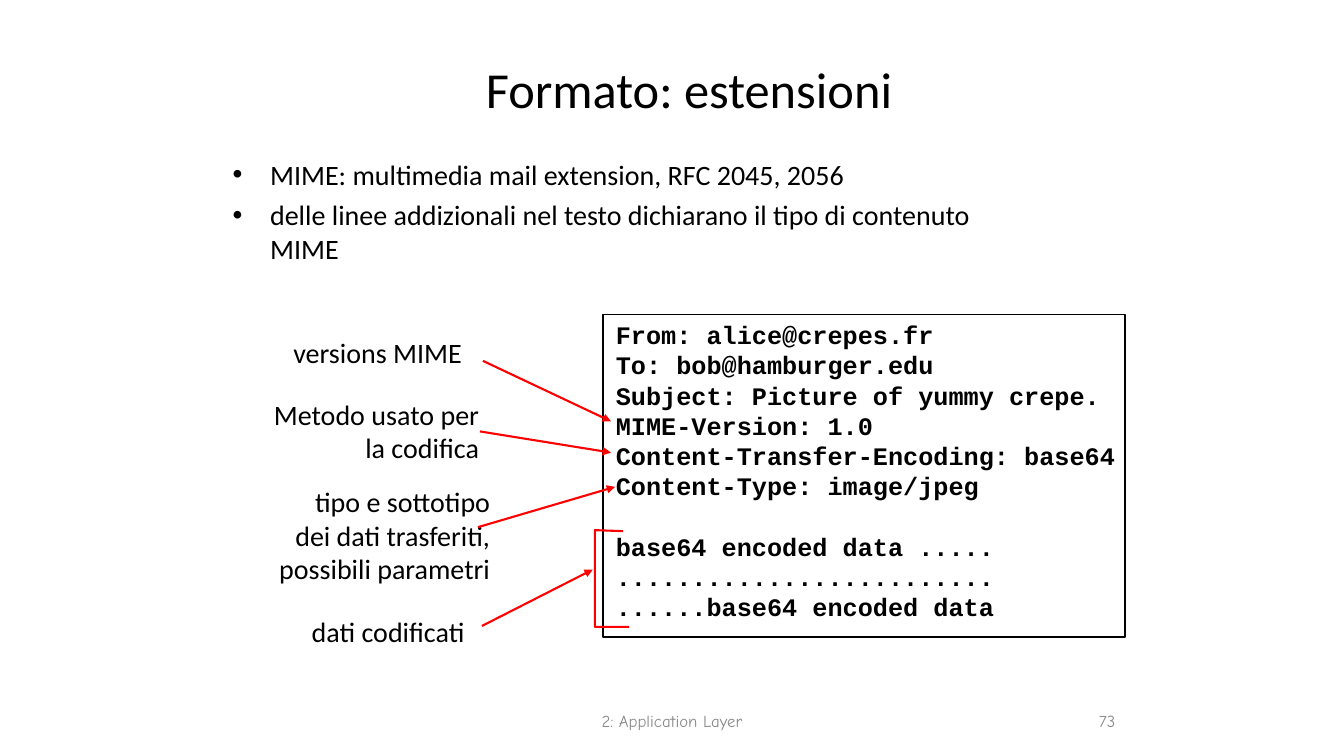
from lxml import etree
from pptx import Presentation
from pptx.dml.color import RGBColor
from pptx.enum.shapes import MSO_CONNECTOR, MSO_SHAPE
from pptx.enum.text import MSO_ANCHOR, PP_ALIGN
from pptx.oxml.ns import qn
from pptx.util import Inches, Pt

LEFT, MID, RIGHT = PP_ALIGN.LEFT, PP_ALIGN.CENTER, PP_ALIGN.RIGHT
TOP, CENTER = MSO_ANCHOR.TOP, MSO_ANCHOR.MIDDLE
STRAIGHT, RECT = MSO_CONNECTOR.STRAIGHT, MSO_SHAPE.RECTANGLE
COLORS = {"ink": "000000", "mark": "FF0000", "foot": "898989"}
BODY, MONO, COMIC = "Calibri", "Courier New", "Comic Neue"
MAIL = [
    "From: alice@crepes.fr",
    "To: bob@hamburger.edu",
    "Subject: Picture of yummy crepe.",
    "MIME-Version: 1.0",
    "Content-Transfer-Encoding: base64",
    "Content-Type: image/jpeg",
]
DATA = [
    "base64 encoded data .....",
    ".........................",
    "......base64 encoded data",
]
NOTES = [
    (["versions MIME"], (2.8, 3.28, 1.89, 0.44), MID, (4.79, 3.58), (6.06, 4.18)),
    (["Metodo usato per", "la codifica"], (2.6, 3.89, 2.25, 0.78), RIGHT,
     (4.76, 4.28), (6.06, 4.49)),
    (["tipo e sottotipo", "dei dati trasferiti,", "possibili parametri"],
     (2.65, 4.76, 2.31, 1.11), RIGHT, (4.74, 5.23), (6.1, 4.83)),
    (["dati codificati"], (2.98, 6.05, 1.74, 0.44), MID, (4.78, 6.21), (5.88, 5.65)),
]


def color(name):
    """Return the named colour."""
    return RGBColor.from_string(COLORS[name])


def write(slide, box, lines, size=20, font=BODY, ink="ink", bold=False,
          align=LEFT, anchor=TOP, wrap=True, pitch=None):
    """Place one paragraph per line in a text box and return its frame."""
    frame = slide.shapes.add_textbox(*map(Inches, box)).text_frame
    frame.word_wrap = wrap
    frame.vertical_anchor = anchor
    for i, line in enumerate(lines):
        para = frame.add_paragraph() if i else frame.paragraphs[0]
        para.alignment = align
        if pitch:
            para.line_spacing = Pt(pitch)
        run = para.add_run()
        run.text = line
        run.font.size, run.font.name, run.font.bold = Pt(size), font, bold
        run.font.color.rgb = color(ink)
    return frame


def stroke(shape, name, width):
    """Give a shape or connector its line."""
    shape.line.color.rgb = color(name)
    shape.line.width = Pt(width)


def arrow(slide, start, end):
    """Draw a red arrow between two points."""
    link = slide.shapes.add_connector(STRAIGHT, *map(Inches, start + end))
    stroke(link, "mark", 1.5)
    etree.SubElement(link.line._get_or_add_ln(), qn("a:tailEnd"), type="triangle")
    etree.SubElement(link._element.spPr, qn("a:effectLst"))


def bullets(slide, box, lines):
    """Place the bulleted list."""
    for para in write(slide, box, lines).paragraphs:
        para.space_before = Pt(5)
        props = para._p.get_or_add_pPr()
        props.set("marL", str(Inches(0.37)))
        props.set("indent", str(Inches(-0.37)))
        etree.SubElement(props, qn("a:buFont"), typeface="Arial")
        etree.SubElement(props, qn("a:buChar"), char="•")


def mail(slide, box):
    """Place the framed message, with a gap between header and data."""
    x, y, w, h = box
    pitch = 21.6
    frame = write(slide, (x + 0.03, y, w + 0.26, h), MAIL + DATA, size=18,
                  font=MONO, bold=True, pitch=pitch)
    frame.paragraphs[len(MAIL)].space_before = Pt(pitch)
    edge = slide.shapes.add_shape(RECT, *map(Inches, box))
    edge.shadow.inherit = False
    edge.fill.background()
    stroke(edge, "ink", 1)


def bracket(slide, box):
    """Draw the open bracket beside the encoded data."""
    x, y, w, h = box
    points = [(x, y), (x, y + h), (x + w, y + h)]
    path = slide.shapes.build_freeform(Inches(x + 0.28), Inches(y + 0.01))
    path.add_line_segments([(Inches(a), Inches(b)) for a, b in points], close=False)
    shape = path.convert_to_shape()
    shape.shadow.inherit = False
    shape.fill.background()
    stroke(shape, "mark", 1.5)


def labels(slide):
    """Place each label with its arrow."""
    for lines, box, align, start, end in NOTES:
        write(slide, box, lines, align=align, wrap=False)
        arrow(slide, start, end)


def footer(slide, top, height):
    """Place the footer text and the slide number."""
    style = {"size": 12, "font": COMIC, "ink": "foot", "anchor": CENTER}
    write(slide, (5.08, top, 3.17, height), ["2: Application Layer"], align=MID, **style)
    write(slide, (8.83, top, 2.33, height), ["73"], align=RIGHT, **style)


def main():
    """Build and save the slide."""
    deck = Presentation()
    deck.slide_width, deck.slide_height = Inches(13.33), Inches(7.5)
    slide = deck.slides.add_slide(deck.slide_layouts[6])
    write(slide, (2.25, 0.25, 9.17, 1.25), ["Formato: estensioni"], size=36,
          align=MID, anchor=CENTER)
    bullets(slide, (2.21, 1.51, 8.01, 5.08), [
        "MIME: multimedia mail extension, RFC 2045, 2056",
        "delle linee addizionali nel testo dichiarano il tipo di contenuto MIME",
    ])
    footer(slide, 6.95, 0.4)
    mail(slide, (5.98, 3.12, 5.18, 3.2))
    labels(slide)
    bracket(slide, (5.9, 5.26, 0.34, 0.96))
    deck.save("out.pptx")


if __name__ == "__main__":
    main()
